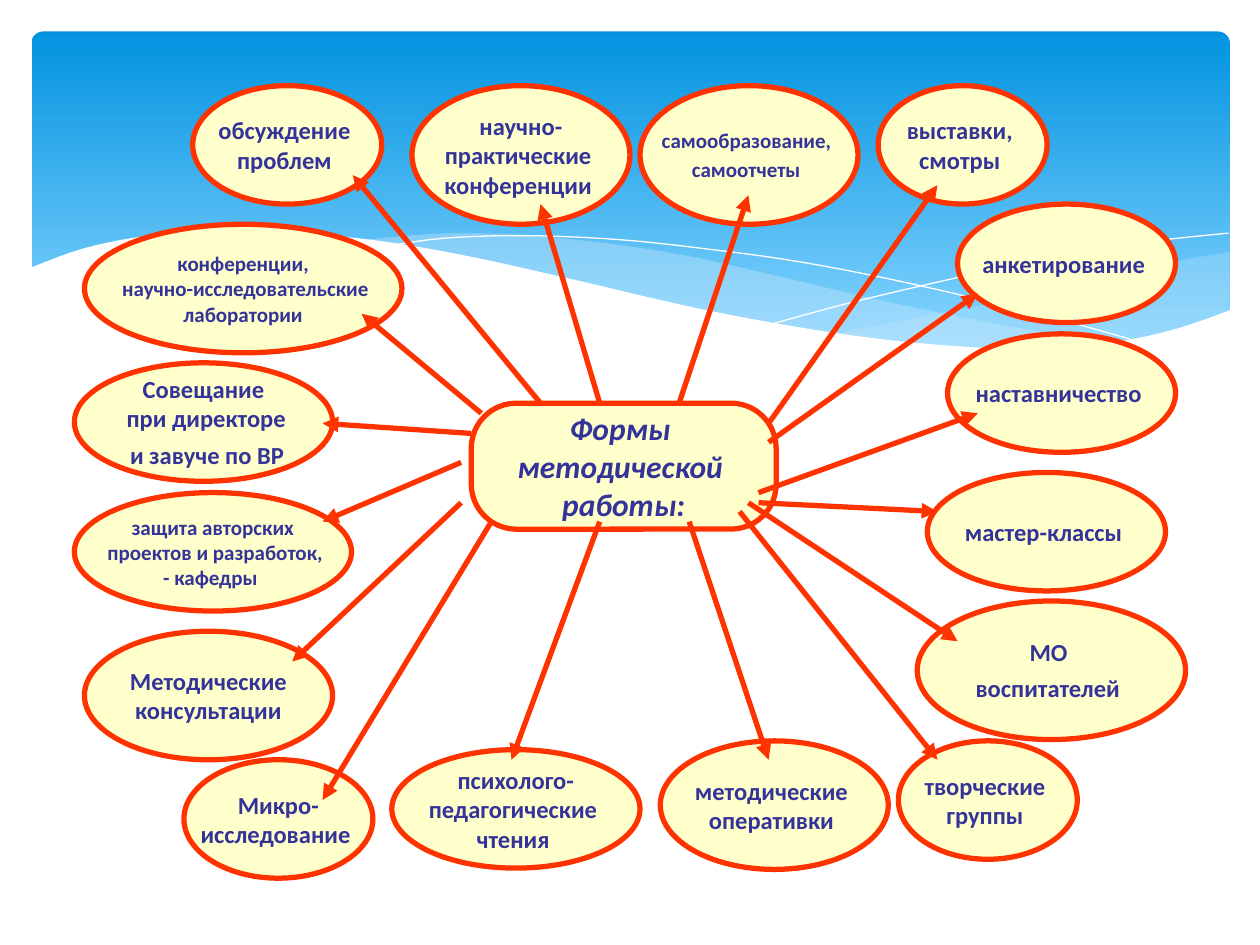
from dataclasses import dataclass
from typing import Any, NamedTuple

from lxml.etree import SubElement
from pptx import Presentation
from pptx.dml.color import RGBColor
from pptx.enum.shapes import MSO_CONNECTOR, MSO_SHAPE
from pptx.enum.text import MSO_ANCHOR, PP_ALIGN
from pptx.oxml.ns import qn
from pptx.util import Inches, Pt

SKY_TOP = RGBColor(0x02, 0x93, 0xE0)
SKY_BOTTOM = RGBColor(0x83, 0xD3, 0xFE)
MIST = RGBColor(0xC6, 0xE7, 0xFC)
WHITE = RGBColor(0xFF, 0xFF, 0xFF)
CREAM = RGBColor(0xFF, 0xFF, 0xCC)
ORANGE = RGBColor(0xFF, 0x33, 0x00)
INDIGO = RGBColor(0x33, 0x33, 0x99)

FRAME_FORMAT = {"word_wrap": False, "vertical_anchor": MSO_ANCHOR.MIDDLE}
FONT_FORMAT = {"name": "Calibri", "bold": True}

Point = tuple[float, float]


class Span(NamedTuple):
    text: str
    size: int


@dataclass
class Bubble:
    left: float
    top: float
    width: float
    height: float
    lines: list[str | list[Span]]
    size: int = 14
    kind: MSO_SHAPE = MSO_SHAPE.OVAL
    italic: bool = False


class Arrow(NamedTuple):
    start: Point
    end: Point


@dataclass
class Wave:
    curves: list[list[Point]]
    fill: RGBColor | None = None
    opacity: int = 100


WAVES = [
    Wave([[(9.76, 2), (9.35, 2.07), (8.61, 2.23), (7.79, 2.42), (6.61, 2.65)],
          [(6.61, 2.65), (7.19, 2.72), (7.69, 2.77), (8.24, 2.77), (8.72, 2.74),
           (9.21, 2.65), (9.49, 2.57), (9.76, 2.47)]], MIST, 29),
    Wave([[(8.93, 2.73), (8.07, 2.6), (7.06, 2.4), (6.29, 2.22), (5.55, 2.05),
           (4.89, 1.94), (4.2, 1.87), (3.61, 1.85), (3.13, 1.88), (2.86, 1.91)],
          [(2.86, 1.91), (3.42, 1.99), (4.04, 2.11), (4.91, 2.32), (5.66, 2.48),
           (6.5, 2.64), (7.22, 2.74), (7.85, 2.78), (8.38, 2.78), (8.93, 2.73)]], MIST, 40),
    Wave([[(3.09, 1.95), (3.53, 1.89), (4.16, 1.87), (4.89, 1.9), (5.56, 1.97),
           (6.36, 2.08), (7.27, 2.26), (8.31, 2.51), (9.07, 2.72)]]),
    Wave([[(6.13, 2.57), (6.72, 2.41), (7.48, 2.23), (8.36, 2.04), (9.1, 1.92),
           (9.75, 1.85)]]),
    Wave([[(9.77, 2.46), (9.3, 2.62), (8.75, 2.73), (8.09, 2.77), (7.26, 2.72),
           (6.48, 2.62), (5.55, 2.45), (4.47, 2.2), (3.65, 2.02), (2.92, 1.9),
           (2.3, 1.85), (1.77, 1.84), (1.19, 1.87), (0.67, 1.97), (0.23, 2.13)],
          [(0.23, 3.29), (9.77, 3.29)]], WHITE),
]

BUBBLES = [
    Bubble(0.67, 1.78, 2.52, 1.02,
           ["конференции,", " научно-исследовательские", " лаборатории "], 12),
    Bubble(6.97, 0.68, 1.34, 0.94, ["выставки, ", "смотры "]),
    Bubble(5.08, 0.68, 1.73, 1.1,
           ["самообразование, ", [Span("самоотчеты", 12), Span(" ", 14)]], 12),
    Bubble(3.27, 0.68, 1.73, 1.1, ["научно-", "практические ", "конференции "]),
    Bubble(1.53, 0.68, 1.5, 0.94, ["обсуждение ", "проблем "]),
    Bubble(3.11, 5.95, 1.97, 0.94, ["психолого-", "педагогические ", "чтения "]),
    Bubble(1.46, 6.03, 1.5, 0.94, ["Микро-", "исследование "]),
    Bubble(5.24, 5.88, 1.81, 1.02, ["методические ", "оперативки "]),
    Bubble(0.67, 5.01, 1.97, 1.02, ["Методические", " консультации "]),
    Bubble(0.59, 3.91, 2.2, 0.94,
           ["защита авторских", " проектов и разработок,", "- кафедры "], 12),
    Bubble(0.59, 2.88, 2.05, 0.94,
           ["Совещание", " при директоре", [Span(" ", 18), Span("и завуче по ВР", 14)]]),
    Bubble(7.6, 1.62, 1.73, 0.94, ["анкетирование "]),
    Bubble(3.74, 3.2, 2.42, 1, ["Формы ", "методической ", "работы:"], 18,
           MSO_SHAPE.ROUNDED_RECTANGLE, True),
    Bubble(7.13, 5.88, 1.42, 0.94, ["творческие ", "группы "]),
    Bubble(7.36, 3.75, 1.89, 0.94, ["мастер-классы "]),
    Bubble(7.52, 2.65, 1.81, 0.94, ["наставничество "]),
    Bubble(7.28, 4.77, 2.13, 1.1, ["МО ", [Span("воспитателей", 14), Span(" ", 18)]]),
]

ARROWS = [
    Arrow((4.29, 3.2), (2.8, 1.39)), Arrow((3.9, 4.14), (2.56, 6.35)),
    Arrow((3.66, 3.99), (2.32, 5.25)), Arrow((3.66, 3.67), (2.56, 4.14)),
    Arrow((3.74, 3.44), (2.56, 3.36)), Arrow((3.82, 3.28), (2.87, 2.49)),
    Arrow((6.1, 3.36), (7.44, 1.47)), Arrow((5.87, 4.06), (7.44, 6.03)),
    Arrow((4.76, 4.14), (4.06, 6.03)), Arrow((5.47, 4.14), (6.1, 6.03)),
    Arrow((6.1, 3.51), (7.76, 2.33)), Arrow((4.76, 3.2), (4.29, 1.62)),
    Arrow((5.39, 3.2), (5.94, 1.55)), Arrow((6.02, 3.91), (7.76, 3.28)),
    Arrow((6.02, 3.99), (7.44, 4.06)), Arrow((5.94, 3.99), (7.6, 5.09)),
]


def apply_format(target: Any, values: dict[str, Any]) -> None:
    for name, value in values.items():
        setattr(target, name, value)


def smooth_curve(knots: list[Point], steps: int = 5) -> list[Point]:
    if len(knots) < 3:
        return knots
    padded = [knots[0], *knots, knots[-1]]
    points = [knots[0]]
    for a, b, c, d in zip(padded, padded[1:], padded[2:], padded[3:]):
        for step in range(1, steps + 1):
            t = step / steps
            points.append(tuple(
                (2 * q + (r - p) * t + (2 * p - 5 * q + 4 * r - s) * t ** 2
                 + (3 * q - p - 3 * r + s) * t ** 3) / 2
                for p, q, r, s in zip(a, b, c, d)))
    return points


def draw_sky(page: Any) -> None:
    sky = page.shapes.add_shape(MSO_SHAPE.ROUNDED_RECTANGLE, Inches(0.25), Inches(0.25),
                                Inches(9.51), Inches(2.7))
    sky.adjustments[0] = 0.034
    sky.shadow.inherit = False
    sky.line.fill.background()
    sky.fill.gradient()
    sky.fill.gradient_angle = 270
    for stop, color, position in zip(sky.fill.gradient_stops, (SKY_TOP, SKY_BOTTOM), (0, 0.9)):
        stop.color.rgb = color
        stop.position = position


def draw_wave(page: Any, wave: Wave) -> None:
    points = [(Inches(x), Inches(y)) for curve in wave.curves for x, y in smooth_curve(curve)]
    builder = page.shapes.build_freeform(*points[0])
    builder.add_line_segments(points[1:], close=wave.fill is not None)
    shape = builder.convert_to_shape()
    shape.shadow.inherit = False
    if wave.fill is None:
        shape.fill.background()
        shape.line.color.rgb = WHITE
        shape.line.width = Pt(0)
        return
    shape.line.fill.background()
    shape.fill.solid()
    shape.fill.fore_color.rgb = wave.fill
    if wave.opacity < 100:
        color = shape.fill._xPr.find(qn("a:solidFill"))[0]
        SubElement(color, qn("a:alpha"), val=str(wave.opacity * 1000))


def draw_bubble(page: Any, bubble: Bubble) -> None:
    box = page.shapes.add_shape(bubble.kind, Inches(bubble.left), Inches(bubble.top),
                                Inches(bubble.width), Inches(bubble.height))
    if bubble.kind == MSO_SHAPE.ROUNDED_RECTANGLE:
        box.adjustments[0] = 0.358
    box.shadow.inherit = False
    box.fill.solid()
    box.fill.fore_color.rgb = CREAM
    box.line.color.rgb = ORANGE
    box.line.width = Pt(3)
    frame = box.text_frame
    apply_format(frame, FRAME_FORMAT)
    for index, line in enumerate(bubble.lines):
        para = frame.add_paragraph() if index else frame.paragraphs[0]
        para.alignment = PP_ALIGN.CENTER
        spans = [Span(line, bubble.size)] if isinstance(line, str) else line
        for span in spans:
            run = para.add_run()
            run.text = span.text
            apply_format(run.font, FONT_FORMAT | {"size": Pt(span.size), "italic": bubble.italic})
            run.font.color.rgb = INDIGO


def draw_arrow(page: Any, arrow: Arrow) -> None:
    ends = [Inches(value) for value in (*arrow.start, *arrow.end)]
    connector = page.shapes.add_connector(MSO_CONNECTOR.STRAIGHT, *ends)
    connector.line.color.rgb = ORANGE
    connector.line.width = Pt(3)
    SubElement(connector.line._get_or_add_ln(), qn("a:tailEnd"), type="triangle")
    SubElement(connector._element.spPr, qn("a:effectLst"))


def main() -> None:
    deck = Presentation()
    apply_format(deck, {"slide_width": Inches(10), "slide_height": Inches(7.5)})
    page = deck.slides.add_slide(deck.slide_layouts[6])
    draw_sky(page)
    for wave in WAVES:
        draw_wave(page, wave)
    for bubble in BUBBLES:
        draw_bubble(page, bubble)
    for arrow in ARROWS:
        draw_arrow(page, arrow)
    deck.save("out.pptx")


if __name__ == "__main__":
    main()
